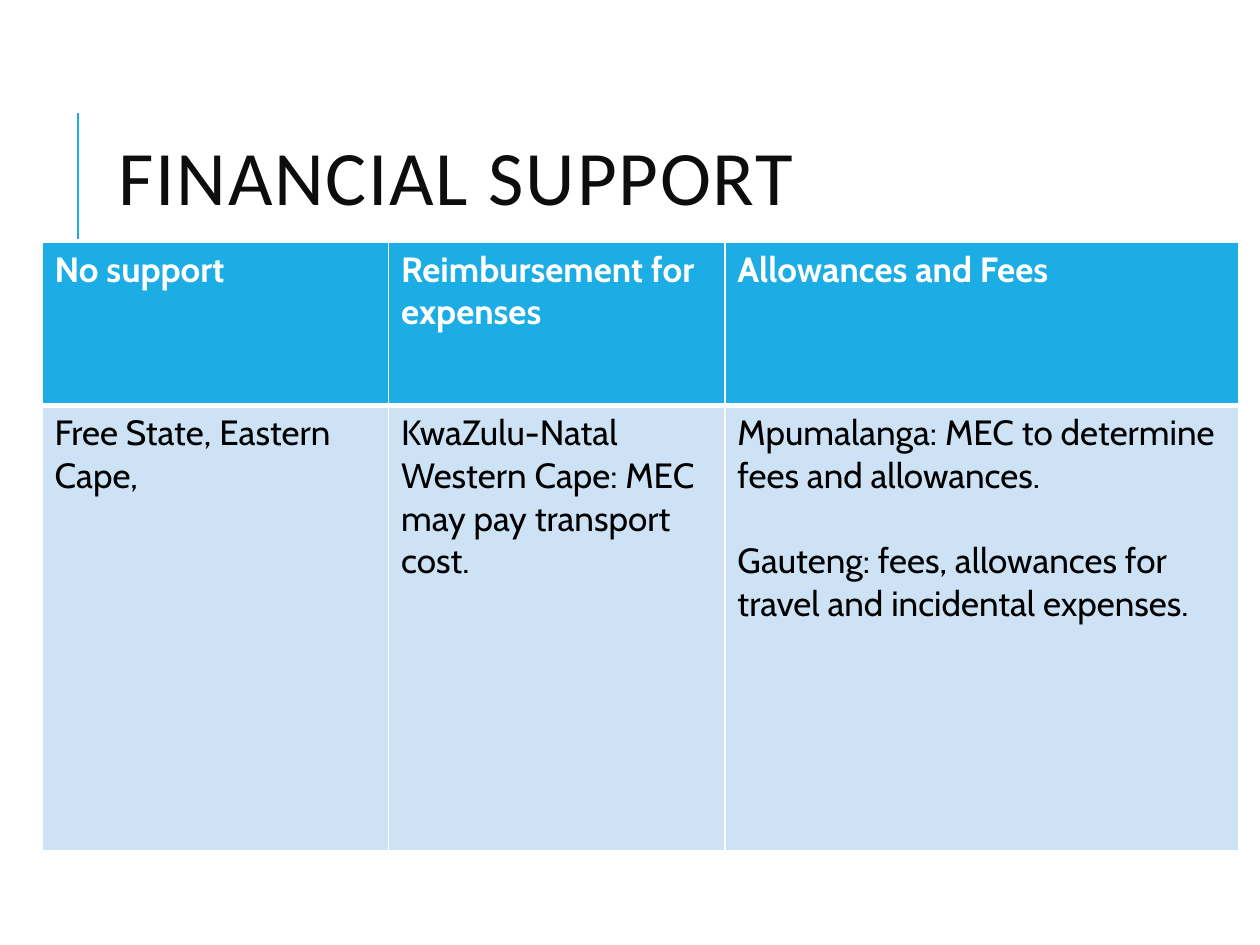
from lxml import etree
from pptx import Presentation
from pptx.dml.color import RGBColor
from pptx.enum.shapes import MSO_CONNECTOR
from pptx.enum.text import MSO_ANCHOR, PP_ALIGN
from pptx.oxml.ns import qn
from pptx.util import Pt

STRAIGHT = MSO_CONNECTOR.STRAIGHT
MIDDLE = MSO_ANCHOR.MIDDLE
LEFT = PP_ALIGN.LEFT
TITLE_ONLY = 5

ACCENT, PALE, WHITE = "1CADE4", "CDE3F5", "FFFFFF"
COLUMNS = [198, 192.24, 293.76]
ROWS = [93.6, 254.16]
CELLS = [
    [["No support"], ["Reimbursement for expenses"], ["Allowances and Fees"]],
    [["Free State, Eastern Cape,"],
     ["KwaZulu-Natal", "Western Cape: MEC may pay transport cost."],
     ["Mpumalanga: MEC to determine fees and allowances.",
      "Gauteng: fees, allowances for travel and incidental expenses."]],
]
PARAGRAPH_GAPS = {"Gauteng: fees, allowances for travel and incidental expenses.": 24.4}
HEADER = {"fill": ACCENT, "borders": {"L": 1, "R": 1, "T": 1, "B": 3},
          "font": {"name": "Cabin", "size": Pt(20), "bold": True}, "color": WHITE}
BODY = {"fill": PALE, "borders": {"L": 1, "R": 1, "T": 3, "B": 1},
        "font": {"name": "Cabin", "size": Pt(20), "bold": False}, "color": "000000"}


def rgb(value):
    return RGBColor.from_string(value)


def format_run(r, font, color):
    for name, value in font.items():
        setattr(r.font, name, value)
    r.font.color.rgb = rgb(color)


def add_title(s, text):
    sp = s.shapes.title
    box = {"left": 60.5, "top": 46, "width": 573.8, "height": 118}
    for name, value in box.items():
        setattr(sp, name, Pt(value))
    tf = sp.text_frame
    tf.word_wrap = True
    tf.vertical_anchor = MIDDLE
    p = tf.paragraphs[0]
    p.alignment = LEFT
    p.line_spacing = 0.8
    r = p.add_run()
    r.text = text
    format_run(r, {"name": "Calibri", "size": Pt(44)}, "0D0D0D")
    r.font._element.set("spc", "100")


def add_rule(s, x, top, bottom):
    line = s.shapes.add_connector(STRAIGHT, Pt(x), Pt(bottom), Pt(x), Pt(top))
    line.line.color.rgb = rgb(ACCENT)
    line.line.width = Pt(1.5)
    etree.SubElement(line._element.spPr, qn("a:effectLst"))


def set_borders(cell, widths):
    tc_pr = cell._tc.get_or_add_tcPr()
    for side, width in widths.items():
        ln = etree.SubElement(tc_pr, qn(f"a:ln{side}"), w=str(Pt(width)))
        fill = etree.SubElement(ln, qn("a:solidFill"))
        etree.SubElement(fill, qn("a:srgbClr"), val=WHITE)


def fill_cell(cell, paragraphs, style):
    set_borders(cell, style["borders"])
    cell.fill.solid()
    cell.fill.fore_color.rgb = rgb(style["fill"])
    tf = cell.text_frame
    for i, text in enumerate(paragraphs):
        p = tf.add_paragraph() if i else tf.paragraphs[0]
        p.space_before = Pt(PARAGRAPH_GAPS.get(text, 0))
        r = p.add_run()
        r.text = text
        format_run(r, style["font"], style["color"])


def add_support_table(s):
    table = s.shapes.add_table(len(ROWS), len(COLUMNS), Pt(24), Pt(138.24),
                               Pt(sum(COLUMNS)), Pt(sum(ROWS))).table
    for column, width in zip(table.columns, COLUMNS):
        column.width = Pt(width)
    for row, height, contents, style in zip(table.rows, ROWS, CELLS, (HEADER, BODY)):
        row.height = Pt(height)
        for cell, paragraphs in zip(row.cells, contents):
            fill_cell(cell, paragraphs, style)


def main():
    prs = Presentation()
    prs.slide_width, prs.slide_height = Pt(720), Pt(540)
    s = prs.slides.add_slide(prs.slide_layouts[TITLE_ONLY])
    add_rule(s, 44.64, 64.8, 136.8)
    add_title(s, "FINANCIAL SUPPORT")
    add_support_table(s)
    prs.save("out.pptx")


if __name__ == "__main__":
    main()
